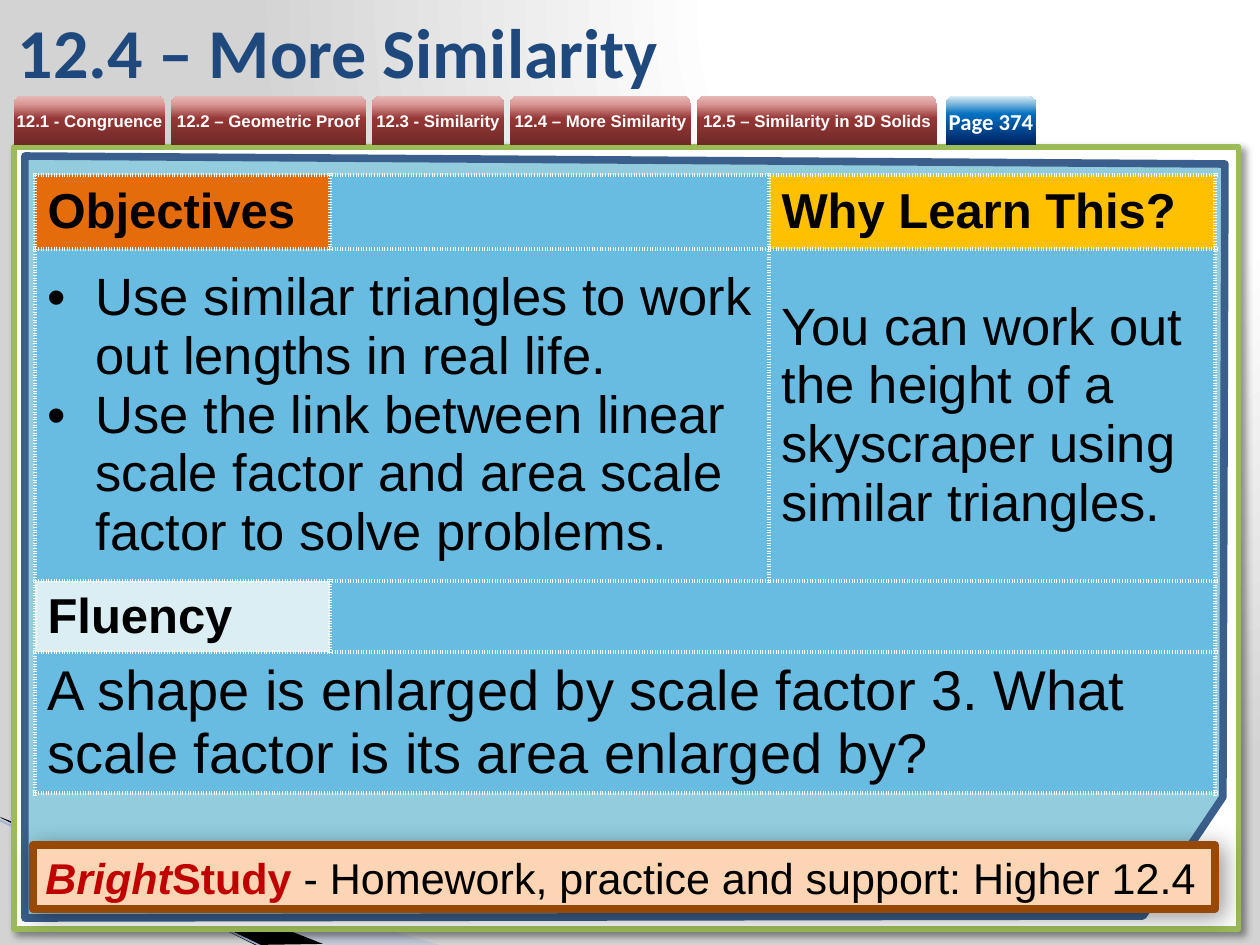
from pptx import Presentation, util as u
from pptx.dml.color import RGBColor
from pptx.enum import shapes, text
from pptx.oxml import parse_xml
from pptx.oxml.ns import nsdecls, qn

EMU_PER_PX = 914400 / 126
COLOURS = {
    "white": "FFFFFF", "black": "000000", "heading": "1F497D",
    "swoosh": "A7B9DB", "swoosh_line": "9EB3D6", "frame": "9BBB59",
    "panel": "93CDDD", "panel_line": "3A5F8C", "cell": "68BCE1",
    "objectives": "E46C0A", "reason": "FFC000", "fluency": "DBEEF4",
    "support": "FCD5B5", "support_line": "984807", "brand": "C00000",
}
TAB_STOPS = [(0, "6F2927"), (54, "953735"), (83, "D99694"), (100, "E6B9B8")]
PAGE_STOPS = [(0, "002060"), (63, "0070C0"), (100, "DBEEF4")]
BACKDROP_STOPS = [(0, "FFFFFF"), (40, "FFFFFF"), (100, "D3D3D3")]


def px(length):
    """Turn pixels into EMU."""
    return u.Emu(round(length * EMU_PER_PX))


def rgb(name):
    """Look up a named colour."""
    return RGBColor.from_string(COLOURS[name])


def style_runs(paragraph, size, colour="black", bold=False, font="Arial"):
    """Format every run of a paragraph."""
    for run in paragraph.runs:
        run.font.name, run.font.size, run.font.bold = font, u.Pt(size), bold
        run.font.color.rgb = rgb(colour)


def set_stops(grad_fill, stops):
    """Replace the colour stops of a gradient."""
    stop_list = grad_fill.find(qn("a:gsLst"))
    for stop in list(stop_list):
        stop_list.remove(stop)
    for position, colour in stops:
        stop_list.append(parse_xml(
            f'<a:gs {nsdecls("a")} pos="{position * 1000}">'
            f'<a:srgbClr val="{colour}"/></a:gs>'))


def paint(shape, fill, line=None, width=0):
    """Give a shape a flat fill, an optional outline and no shadow."""
    shape.shadow.inherit = False
    shape.fill.solid()
    shape.fill.fore_color.rgb = rgb(fill)
    if line:
        shape.line.color.rgb = rgb(line)
        shape.line.width = u.Pt(width)
    else:
        shape.line.fill.background()


def cast_shadow(shape, blur):
    """Add a soft shadow to the lower right."""
    effects = shape._element.spPr.find(qn("a:effectLst"))
    effects.append(parse_xml(
        f'<a:outerShdw {nsdecls("a")} blurRad="{u.Pt(blur)}" dist="{u.Pt(3)}" '
        'dir="2700000" algn="tl" rotWithShape="0"><a:srgbClr val="000000">'
        '<a:alpha val="40000"/></a:srgbClr></a:outerShdw>'))


def add_box(slide, kind, box):
    """Add a preset shape in a pixel box."""
    return slide.shapes.add_shape(kind, *map(px, box))


def add_outline(slide, box, points):
    """Add a closed outline whose points are relative to the box."""
    left, top = box
    corners = [(left + x, top + y) for x, y in points]
    builder = slide.shapes.build_freeform(*corners[0], scale=EMU_PER_PX)
    builder.add_line_segments(corners[1:], close=True)
    return builder.convert_to_shape()


def draw_backdrop(slide):
    """Draw the background gradient and the corner swoosh."""
    fill = slide.background.fill
    fill.gradient()
    grad_fill = slide._element.cSld.find(".//" + qn("a:gradFill"))
    set_stops(grad_fill, BACKDROP_STOPS)
    grad_fill.replace(grad_fill.find(qn("a:lin")), parse_xml(
        f'<a:path {nsdecls("a")} path="circle">'
        '<a:fillToRect l="65000" b="98000"/></a:path>'))
    pale = add_outline(slide, (-1, 818), [(0, 1), (441, 127), (327, 127), (0, 0)])
    paint(pale, "swoosh")
    pale._element.spPr.find(".//" + qn("a:srgbClr")).append(
        parse_xml(f'<a:alpha {nsdecls("a")} val="40000"/>'))
    dark = add_outline(slide, (0, 817), [(0, 0), (323, 127), (255, 128), (1, 1)])
    paint(dark, "black")
    edge = slide.shapes.add_connector(
        shapes.MSO_CONNECTOR.STRAIGHT, px(-1), px(820), px(263), px(947))
    edge.line.color.rgb = rgb("swoosh_line")
    edge.line.width = u.Pt(0.95)
    edge._element.spPr.append(parse_xml(f'<a:effectLst {nsdecls("a")}/>'))


def draw_frame(slide, box):
    """Draw the white frame and the cut-corner panel inside it."""
    frame = add_box(slide, shapes.MSO_SHAPE.RECTANGLE, box)
    paint(frame, "white", "frame", 3)
    cast_shadow(frame, 4)
    panel = add_outline(slide, (box[0] + 11, box[1] + 9), [
        (0, 0), (1200, 8), (1198, 641), (1118, 760), (0, 762)])
    paint(panel, "panel", "panel_line", 4.33)


def draw_tab(slide, box, label, stops, size, font):
    """Draw one navigation tab with a rounded top."""
    tab = add_box(slide, shapes.MSO_SHAPE.ROUND_2_SAME_RECTANGLE, box)
    tab.shadow.inherit = False
    tab.fill.gradient()
    tab.fill.gradient_angle = 90
    set_stops(tab._element.spPr.find(qn("a:gradFill")), stops)
    tab.line.fill.background()
    frame = tab.text_frame
    frame.margin_left = frame.margin_right = 0
    frame.margin_top = frame.margin_bottom = 0
    frame.word_wrap = True
    frame.vertical_anchor = text.MSO_ANCHOR.MIDDLE
    frame.text = label
    frame.paragraphs[0].alignment = text.PP_ALIGN.CENTER
    style_runs(frame.paragraphs[0], size, "white", True, font)
    return frame.paragraphs[0]


def draw_tabs(slide, box):
    """Draw the row of section tabs and the page tab."""
    left, top, height = box
    sections = [("12.1 - Congruence", 151), ("12.2 – Geometric Proof", 195),
                ("12.3 - Similarity", 132), ("12.4 – More Similarity", 181),
                ("12.5 – Similarity in 3D Solids", 240)]
    for label, width in sections:
        section = draw_tab(slide, (left, top, width, height), label,
                           TAB_STOPS, 9.6, "Arial")
        section.line_spacing = u.Pt(10)
        left += width + 6
    draw_tab(slide, (left + 3, top, 90, height), "Page 374", PAGE_STOPS, 13, "Calibri")


def draw_title(slide, box, heading):
    """Place the heading in the title placeholder."""
    title = slide.shapes.title
    title.left, title.top, title.width, title.height = map(px, box)
    frame = title.text_frame
    frame.text = heading
    frame.auto_size = text.MSO_AUTO_SIZE.NONE
    frame.vertical_anchor = text.MSO_ANCHOR.MIDDLE
    frame.paragraphs[0].alignment = text.PP_ALIGN.LEFT
    style_runs(frame.paragraphs[0], 40, "heading", True, "Calibri")


def style_cell(cell):
    """Give a cell dotted borders, the base fill and a middle anchor."""
    properties = cell._tc.get_or_add_tcPr()
    for side in "LRTB":
        properties.append(parse_xml(
            f'<a:ln{side} {nsdecls("a")} w="{u.Pt(3)}"><a:solidFill>'
            f'<a:srgbClr val="{COLOURS["white"]}"/></a:solidFill>'
            f'<a:prstDash val="sysDot"/></a:ln{side}>'))
    cell.fill.solid()
    cell.fill.fore_color.rgb = rgb("cell")
    cell.vertical_anchor = text.MSO_ANCHOR.MIDDLE


def draw_lesson(slide, box, columns, rows):
    """Draw the table of objectives, reason and fluency question."""
    lesson = slide.shapes.add_table(len(rows), len(columns), *map(px, box)).table
    lesson.first_row = lesson.horz_banding = False
    for column, width in zip(lesson.columns, columns):
        column.width = px(width)
    for row, height in zip(lesson.rows, rows):
        row.height = px(height)
    for cell in lesson.iter_cells():
        style_cell(cell)
    for start, end in [((1, 0), (1, 1)), ((2, 1), (2, 2)), ((3, 0), (3, 2))]:
        lesson.cell(*start).merge(lesson.cell(*end))
    headings = [(0, 0, "Objectives", "objectives"),
                (0, 2, "Why Learn This?", "reason"), (2, 0, "Fluency", "fluency")]
    for row, column, heading, fill in headings:
        cell = lesson.cell(row, column)
        cell.fill.fore_color.rgb = rgb(fill)
        cell.text = heading
        style_runs(cell.text_frame.paragraphs[0], 28, bold=True)
    objectives = ("Use similar triangles to work out lengths in real life.\n"
                  "Use the link between linear scale factor and area scale "
                  "factor to solve problems.")
    reason = "You can work out the height of a skyscraper using similar triangles."
    question = ("A shape is enlarged by scale factor 3. "
                "What scale factor is its area enlarged by?")
    for row, column, body, size in [(1, 0, objectives, 30), (1, 2, reason, 30),
                                    (3, 0, question, 32)]:
        cell = lesson.cell(row, column)
        cell.text = body
        for paragraph in cell.text_frame.paragraphs:
            style_runs(paragraph, size)
    for objective in lesson.cell(1, 0).text_frame.paragraphs:
        properties = objective._p.get_or_add_pPr()
        properties.set("marL", str(px(48)))
        properties.set("indent", str(px(-48)))
        properties.append(parse_xml(f'<a:buFont {nsdecls("a")} typeface="Arial"/>'))
        properties.append(parse_xml(f'<a:buChar {nsdecls("a")} char="•"/>'))


def draw_support(slide, box):
    """Draw the homework support bar."""
    support = add_box(slide, shapes.MSO_SHAPE.RECTANGLE, box)
    paint(support, "support", "support_line", 4.33)
    cast_shadow(support, 13)
    frame = support.text_frame
    frame.word_wrap = True
    frame.vertical_anchor = text.MSO_ANCHOR.MIDDLE
    line = frame.paragraphs[0]
    line.alignment = text.PP_ALIGN.LEFT
    for words in ("Bright", "Study ", "- Homework, practice and support: Higher 12.4"):
        line.add_run().text = words
    style_runs(line, 24.6)
    for brand in line.runs[:2]:
        brand.font.bold = True
        brand.font.color.rgb = rgb("brand")
    line.runs[0].font.italic = True


def main():
    """Build the lesson slide and save it."""
    deck = Presentation()
    deck.slide_width, deck.slide_height = px(1260), px(945)
    slide = deck.slides.add_slide(deck.slide_layouts[5])
    draw_backdrop(slide)
    draw_frame(slide, (14, 147, 1225, 782))
    draw_title(slide, (5, 6, 1042, 89), "12.4 – More Similarity")
    draw_tabs(slide, (14, 96, 49))
    draw_lesson(slide, (35, 175, 1180, 618), (295, 439, 446), (74, 332, 71, 141))
    draw_support(slide, (33, 845, 1182, 64))
    deck.save("out.pptx")


if __name__ == "__main__":
    main()
